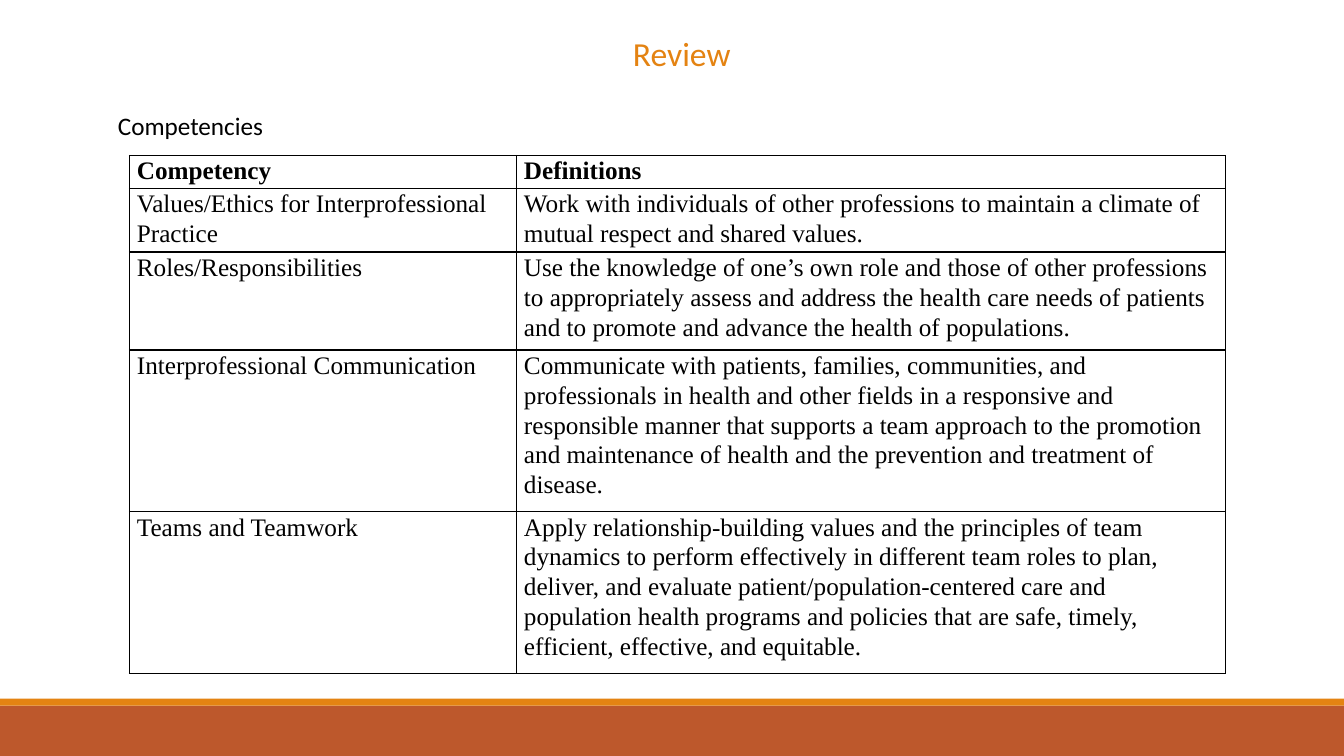
from dataclasses import dataclass

from lxml import etree
from pptx import Presentation
from pptx.dml.color import RGBColor
from pptx.enum import shapes, text
from pptx.oxml import ns
from pptx.util import Pt


@dataclass(frozen=True)
class Theme:
    accent: RGBColor = RGBColor(0xE4, 0x83, 0x12)
    footer: RGBColor = RGBColor(0xBD, 0x58, 0x2C)
    ink: RGBColor = RGBColor(0, 0, 0)
    heading_font: str = "Calibri"
    table_font: str = "Times New Roman"
    title_size: int = 24
    text_size: int = 18


class SlideBuilder:
    def __init__(self, slide, theme):
        self.slide = slide
        self.theme = theme

    def style(self, paragraph, font, size, color, bold=False):
        for run in paragraph.runs:
            run.font.name = font
            run.font.size = Pt(size)
            run.font.color.rgb = color
            run.font.bold = bold

    def band(self, top, height, color):
        bar = self.slide.shapes.add_shape(
            shapes.MSO_SHAPE.RECTANGLE, 0, Pt(top), Pt(960), Pt(height))
        bar.shadow.inherit = False
        bar.fill.solid()
        bar.fill.fore_color.rgb = color
        bar.line.fill.background()

    def heading(self, index, words, box, size, color, align):
        holder = self.slide.placeholders[index]
        holder.left, holder.top, holder.width, holder.height = map(Pt, box)
        frame = holder.text_frame
        frame.text = words
        frame.word_wrap = True
        frame.auto_size = text.MSO_AUTO_SIZE.NONE
        frame.vertical_anchor = text.MSO_ANCHOR.TOP
        paragraph = frame.paragraphs[0]
        paragraph.alignment = align
        paragraph.space_before = Pt(0)
        # Plain text: no bullet and no hanging indent
        properties = paragraph._p.get_or_add_pPr()
        properties.set("marL", "0")
        properties.set("indent", "0")
        etree.SubElement(properties, ns.qn("a:buNone"))
        self.style(paragraph, self.theme.heading_font, size, color)

    def borders(self, cell):
        properties = cell._tc.get_or_add_tcPr()
        for position, side in enumerate(("lnL", "lnR", "lnT", "lnB")):
            line = etree.Element(ns.qn(f"a:{side}"), w=str(Pt(1)))
            fill = etree.SubElement(line, ns.qn("a:solidFill"))
            etree.SubElement(fill, ns.qn("a:srgbClr"), val=str(self.theme.ink))
            properties.insert(position, line)

    def table(self, rows, left, top, widths, heights):
        grid = self.slide.shapes.add_table(
            len(rows), len(widths), Pt(left), Pt(top),
            Pt(sum(widths)), Pt(sum(heights))).table
        grid.first_row = False
        grid.horz_banding = False
        for column, width in zip(grid.columns, widths):
            column.width = Pt(width)
        for row_number, (words, height) in enumerate(zip(rows, heights)):
            grid.rows[row_number].height = Pt(height)
            for cell, content in zip(grid.rows[row_number].cells, words):
                cell.text_frame.text = content
                cell.margin_left = cell.margin_right = Pt(5.4)
                cell.margin_top = cell.margin_bottom = 0
                cell.fill.background()
                self.borders(cell)
                paragraph = cell.text_frame.paragraphs[0]
                paragraph.line_spacing = 1.07
                self.style(paragraph, self.theme.table_font, self.theme.text_size,
                           self.theme.ink, bold=row_number == 0)


COMPETENCIES = [
    ("Competency", "Definitions"),
    ("Values/Ethics for Interprofessional Practice",
     "Work with individuals of other professions to maintain a climate of "
     "mutual respect and shared values."),
    ("Roles/Responsibilities",
     "Use the knowledge of one’s own role and those of other professions to "
     "appropriately assess and address the health care needs of patients and "
     "to promote and advance the health of populations."),
    ("Interprofessional Communication",
     "Communicate with patients, families, communities, and professionals in "
     "health and other fields in a responsive and responsible manner that "
     "supports a team approach to the promotion and maintenance of health and "
     "the prevention and treatment of disease."),
    ("Teams and Teamwork",
     "Apply relationship-building values and the principles of team dynamics "
     "to perform effectively in different team roles to plan, deliver, and "
     "evaluate patient/population-centered care and population health "
     "programs and policies that are safe, timely, efficient, effective, and "
     "equitable."),
]


def main():
    deck = Presentation()
    deck.slide_width, deck.slide_height = Pt(960), Pt(540)
    theme = Theme()
    review = SlideBuilder(deck.slides.add_slide(deck.slide_layouts[1]), theme)

    # Footer bands
    review.band(504, 36, theme.footer)
    review.band(499, 5, theme.accent)

    # Title and subheading
    review.heading(0, "Review", (214, 20, 546, 138), theme.title_size,
                   theme.accent, text.PP_ALIGN.CENTER)
    review.heading(1, "Competencies", (77, 75, 783, 73), theme.text_size,
                   theme.ink, text.PP_ALIGN.LEFT)

    # Competency definitions
    review.table(COMPETENCIES, 92.4, 111, (276.5, 506.2),
                 (23.5, 45.5, 70, 115.5, 115.5))

    deck.save("out.pptx")


if __name__ == "__main__":
    main()
